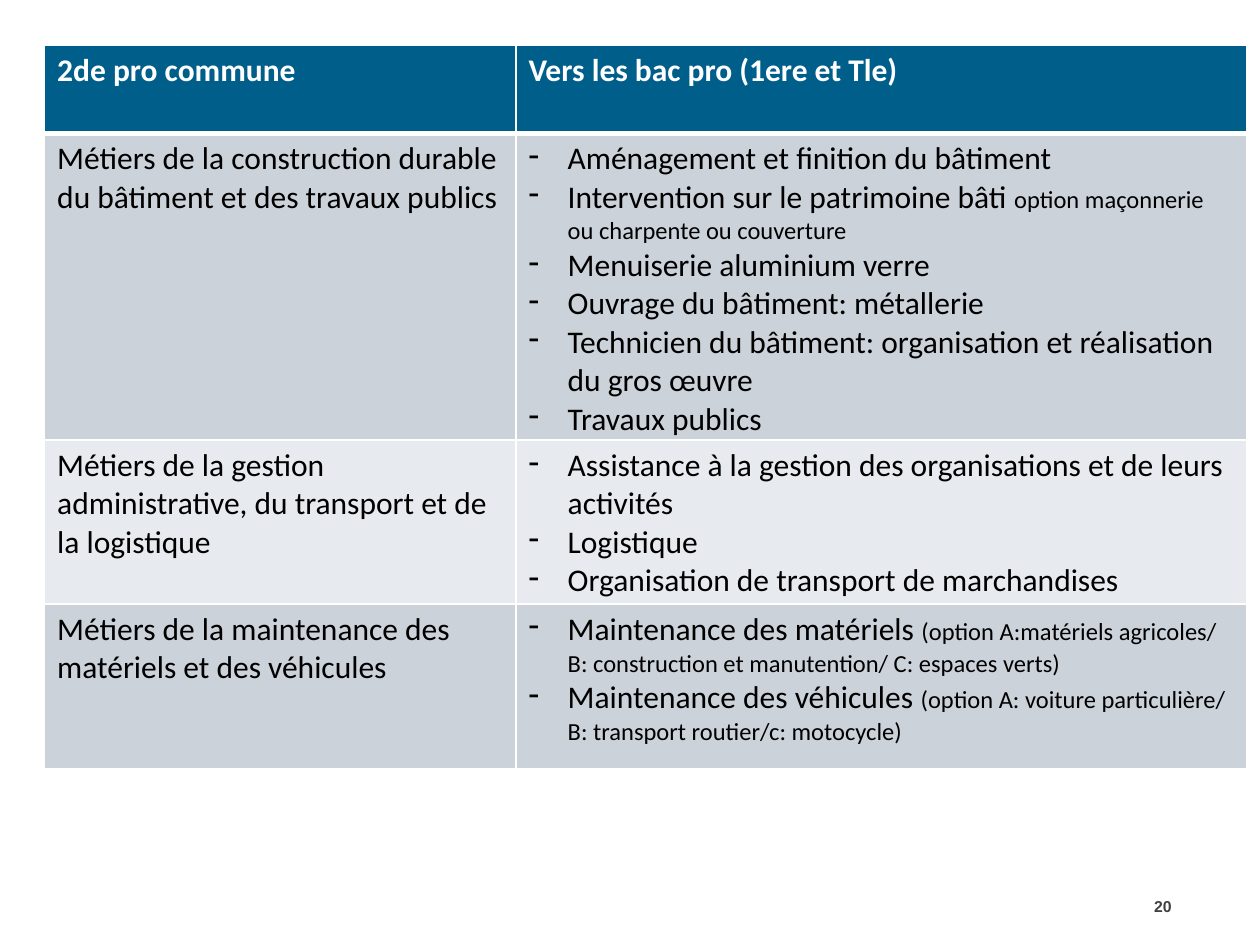
from pptx import Presentation
from pptx.dml.color import RGBColor
from pptx.enum.text import MSO_ANCHOR as Anchor, PP_ALIGN as Align
from pptx.oxml.ns import qn
from pptx.util import Cm, Pt
from lxml.etree import SubElement

COLORS = {
    "header": "005E8B",
    "dark band": "CCD2DA",
    "light band": "E7EAEE",
    "white": "FFFFFF",
    "text": "000000",
    "number": "404040",
}
HEADER = ("2de pro commune", "Vers les bac pro (1ere et Tle)")
# Each programme is a list of spans: the name, then an optional smaller note.
FAMILIES = [
    ("Métiers de la construction durable du bâtiment et des travaux publics", [
        ["Aménagement et finition du bâtiment"],
        ["Intervention sur le patrimoine bâti ",
         "option maçonnerie ou charpente ou couverture"],
        ["Menuiserie aluminium verre"],
        ["Ouvrage du bâtiment: métallerie"],
        ["Technicien du bâtiment: organisation et réalisation du gros œuvre"],
        ["Travaux publics"],
    ]),
    ("Métiers de la gestion administrative, du transport et de la logistique", [
        ["Assistance à la gestion des organisations et de leurs activités"],
        ["Logistique"],
        ["Organisation de transport de marchandises"],
    ]),
    ("Métiers de la maintenance des matériels et des véhicules", [
        ["Maintenance des matériels ",
         "(option A:matériels agricoles/ B: construction et manutention/ C: espaces verts)"],
        ["Maintenance des véhicules ",
         "(option A: voiture particulière/ B: transport routier/c: motocycle)"],
    ]),
]
COLUMN_WIDTHS = (9.5, 14.73)
ROW_HEIGHTS = (1.77, 6.18, 3.3, 3.32)


class PageBuilder:
    font, size, note_size = "Calibri", 18, 14
    indent = Cm(0.79)

    def __init__(self, page):
        self.page = page

    def add_span(self, para, text, size, color, bold=False, font=None):
        span = para.add_run()
        span.text = text
        span.font.name = font or self.font
        span.font.size = Pt(size)
        span.font.bold = bold
        span.font.color.rgb = RGBColor.from_string(COLORS[color])

    def add_dash(self, para):
        props = para._p.get_or_add_pPr()
        props.set("marL", str(self.indent))
        props.set("indent", str(-self.indent))
        SubElement(props, qn("a:buFontTx"))
        SubElement(props, qn("a:buChar"), char="-")

    def style_cell(self, cell, fill, top=1, bottom=1):
        """Give the cell white borders (widths in points) and a plain fill."""
        props = cell._tc.get_or_add_tcPr()
        for side, width in (("L", 1), ("R", 1), ("T", top), ("B", bottom)):
            line = SubElement(props, qn(f"a:ln{side}"), w=str(Pt(width)))
            paint = SubElement(line, qn("a:solidFill"))
            SubElement(paint, qn("a:srgbClr"), val=COLORS["white"])
        cell.fill.solid()
        cell.fill.fore_color.rgb = RGBColor.from_string(COLORS[fill])

    def fill_programmes(self, cell, programmes):
        frame = cell.text_frame
        for index, spans in enumerate(programmes):
            para = frame.add_paragraph() if index else frame.paragraphs[0]
            self.add_dash(para)
            for text, size in zip(spans, (self.size, self.note_size)):
                self.add_span(para, text, size, "text")

    def add_family_table(self, left, top):
        table = self.page.shapes.add_table(
            len(ROW_HEIGHTS), len(COLUMN_WIDTHS), Cm(left), Cm(top),
            Cm(sum(COLUMN_WIDTHS)), Cm(sum(ROW_HEIGHTS))).table
        table.horz_banding = False
        for column, width in zip(table.columns, COLUMN_WIDTHS):
            column.width = Cm(width)
        for row, height in zip(table.rows, ROW_HEIGHTS):
            row.height = Cm(height)

        for column, text in enumerate(HEADER):
            cell = table.cell(0, column)
            self.style_cell(cell, "header", bottom=3)
            self.add_span(cell.text_frame.paragraphs[0], text, self.size, "white", bold=True)

        for row, (family, programmes) in enumerate(FAMILIES, start=1):
            name_cell, programme_cell = table.cell(row, 0), table.cell(row, 1)
            for cell in (name_cell, programme_cell):
                self.style_cell(cell, "dark band" if row % 2 else "light band",
                                top=3 if row == 1 else 1)
            self.add_span(name_cell.text_frame.paragraphs[0], family, self.size, "text")
            self.fill_programmes(programme_cell, programmes)

    def add_page_number(self, number, left, top, width, height):
        box = self.page.shapes.add_textbox(Cm(left), Cm(top), Cm(width), Cm(height))
        frame = box.text_frame
        frame.word_wrap = True
        frame.vertical_anchor = Anchor.MIDDLE
        para = frame.paragraphs[0]
        para.alignment = Align.RIGHT
        self.add_span(para, number, 9, "number", bold=True, font="Arial")


def main():
    deck = Presentation()
    deck.slide_width, deck.slide_height = Cm(25.4), Cm(19.05)
    builder = PageBuilder(deck.slides.add_slide(deck.slide_layouts[6]))
    builder.add_page_number("20", 22.63, 17.75, 1.24, 1.02)
    builder.add_family_table(0.9, 0.92)
    deck.save("out.pptx")


if __name__ == "__main__":
    main()
